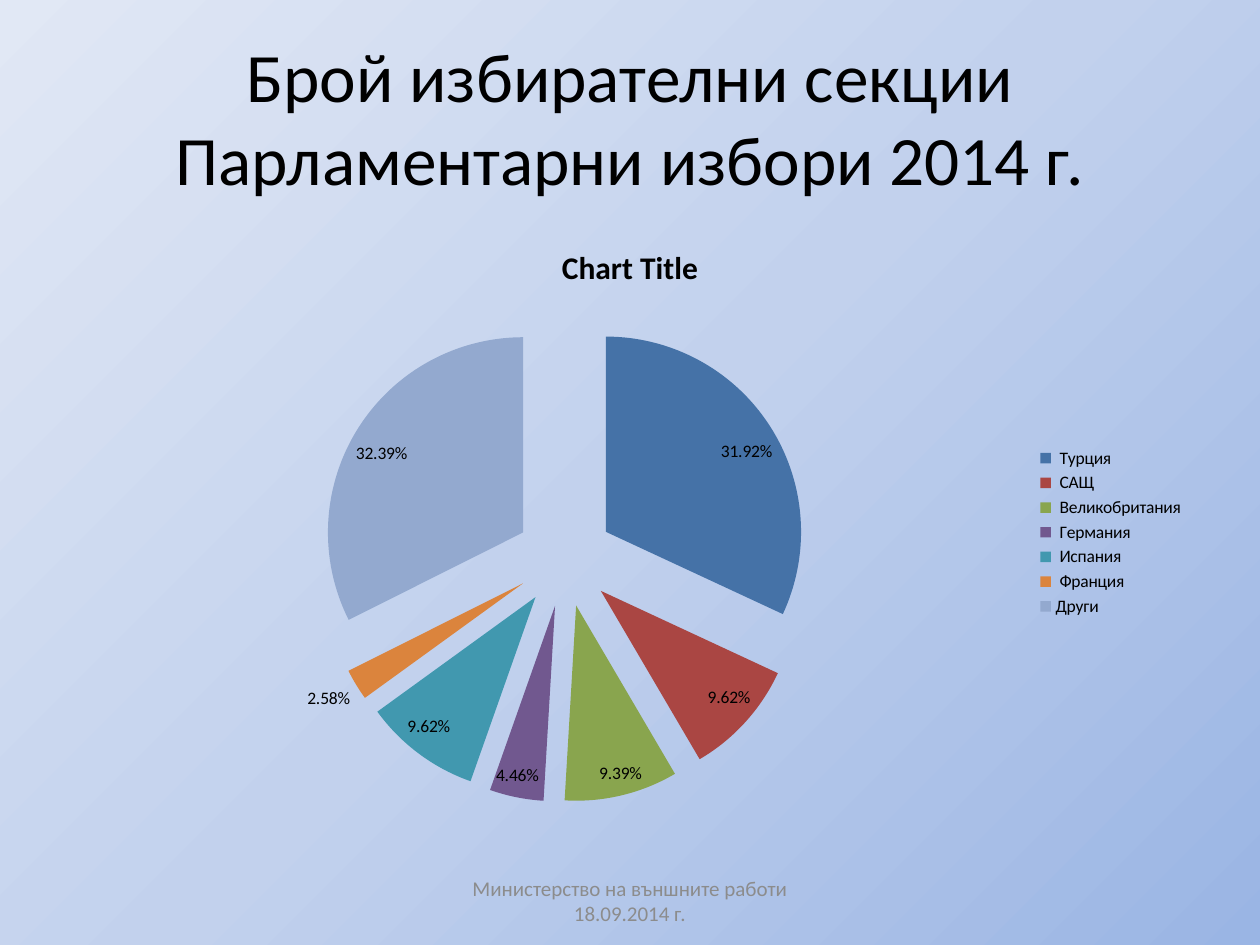
from pptx import Presentation
from pptx.chart.data import CategoryChartData
from pptx.dml.color import RGBColor
from pptx.enum.chart import XL_CHART_TYPE, XL_LABEL_POSITION, XL_LEGEND_POSITION
from pptx.enum.text import MSO_ANCHOR, PP_ALIGN
from pptx.oxml import parse_xml
from pptx.oxml.ns import nsdecls
from pptx.util import Inches, Pt

PIE = XL_CHART_TYPE.PIE_EXPLODED
BEST = XL_LABEL_POSITION.BEST_FIT
RIGHT = XL_LEGEND_POSITION.RIGHT
CENTER = PP_ALIGN.CENTER
MIDDLE = MSO_ANCHOR.MIDDLE

TITLE = "Брой избирателни секции\vПарламентарни избори 2014 г."
FOOTER = "Министерство на външните работи 18.09.2014 г."
HEADING = "Chart Title"
SHARES = [
    (" Турция", 0.3192, "4572A7"),
    (" САЩ", 0.0962, "AA4643"),
    (" Великобритания", 0.0939, "89A54E"),
    (" Германия", 0.0446, "71588F"),
    (" Испания", 0.0962, "4198AF"),
    (" Франция", 0.0258, "DB843D"),
    ("Други", 0.3239, "93A9CF"),
]
THEME = {
    "font": "Calibri", "ink": "000000", "muted": "8C8C8C",
    "title": 39.6, "heading": 18, "footer": 12, "label": 10,
    "back": [(0, "9AB5E4"), (50, "C2D1ED"), (100, "E1E8F5")],
}
WIDTH, HEIGHT = 10, 7.5
MARGIN = 0.05 * WIDTH
INNER = WIDTH - 2 * MARGIN
EXPLODE = 25


def box(left, top, width, height):
    return [Inches(v) for v in (left, top, width, height)]


def style(font, size, color="ink", bold=False):
    font.name = THEME["font"]
    font.size = Pt(THEME[size])
    font.color.rgb = RGBColor.from_string(THEME[color])
    font.bold = bold


def put_text(shape, text, size, color="ink"):
    frame = shape.text_frame
    frame.word_wrap = True
    frame.vertical_anchor = MIDDLE
    frame.text = text
    para = frame.paragraphs[0]
    para.alignment = CENTER
    style(para.font, size, color)


def paint_back(slide):
    """Shade the slide outward from its lower right corner."""
    stops = "".join(
        f'<a:gs pos="{at * 1000}"><a:srgbClr val="{color}"/></a:gs>'
        for at, color in THEME["back"])
    slide.element.cSld.insert(0, parse_xml(
        f'<p:bg {nsdecls("p", "a")}><p:bgPr><a:gradFill rotWithShape="1">'
        f'<a:gsLst>{stops}</a:gsLst><a:path path="circle">'
        '<a:fillToRect l="100000" t="100000"/></a:path></a:gradFill>'
        '<a:effectLst/></p:bgPr></p:bg>'))


def add_pie(slide):
    names, values, colors = zip(*SHARES)
    data = CategoryChartData(number_format="0.00%")
    data.categories = names
    data.add_series("Series 1", values)
    place = box(MARGIN, 1.75, INNER, 4.95)
    chart = slide.shapes.add_chart(PIE, *place, data).chart
    style(chart.font, "label")

    chart.has_title = True
    chart.chart_title.include_in_layout = False
    head = chart.chart_title.text_frame
    head.text = HEADING
    style(head.paragraphs[0].font, "heading", bold=True)

    chart.has_legend = True
    chart.legend.position = RIGHT
    chart.legend.include_in_layout = False

    plot = chart.plots[0]
    plot.vary_by_categories = True
    plot.has_data_labels = True
    labels = plot.data_labels
    labels.show_value = True
    labels.show_percentage = False
    labels.number_format = "0.00%"
    labels.number_format_is_linked = False
    labels.position = BEST

    series = plot.series[0]
    series._element.get_or_add_explosion().set("val", str(EXPLODE)) if hasattr(
        series._element, "get_or_add_explosion") else None
    for i, color in enumerate(colors):
        fill = series.points[i].format.fill
        fill.solid()
        fill.fore_color.rgb = RGBColor.from_string(color)


def main():
    deck = Presentation()
    deck.slide_width, deck.slide_height = Inches(WIDTH), Inches(HEIGHT)
    slide = deck.slides.add_slide(deck.slide_layouts[5])
    paint_back(slide)

    title = slide.shapes.title
    title.left, title.top, title.width, title.height = box(
        MARGIN, 0.3, INNER, 1.25)
    put_text(title, TITLE, "title")
    add_pie(slide)

    wide = 3.17
    foot = slide.shapes.add_textbox(*box((WIDTH - wide) / 2, 6.95, wide, 0.4))
    put_text(foot, FOOTER, "footer", "muted")
    deck.save("out.pptx")


if __name__ == "__main__":
    main()
